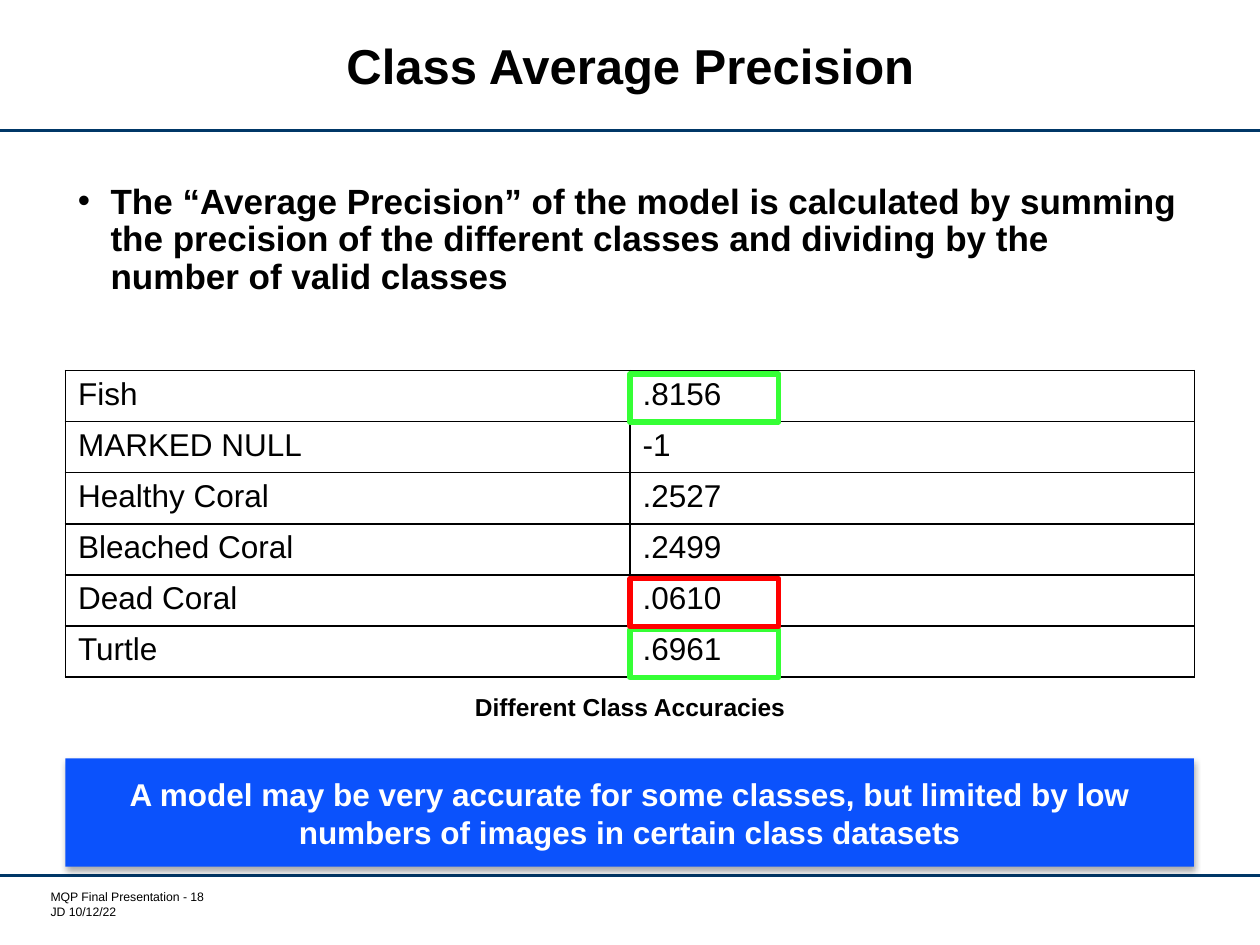
from lxml import etree
from pptx import Presentation
from pptx import util as u
from pptx.dml.color import RGBColor
from pptx.enum import shapes, text
from pptx.oxml import ns

BLACK = RGBColor(0x00, 0x00, 0x00)
WHITE = RGBColor(0xFF, 0xFF, 0xFF)
NAVY = RGBColor(0x00, 0x37, 0x67)
BLUE = RGBColor(0x0B, 0x52, 0xFC)
GREEN = RGBColor(0x35, 0xFF, 0x35)
RED = RGBColor(0xFF, 0x00, 0x00)

FONT = "Arial"
LEFT, WIDTH = 1.32, 22.75
TABLE_TOP, ROW_HEIGHT, COLUMN_WIDTH = 7.47, 1.03, 11.38
PRECISIONS = [
    ("Fish", ".8156"),
    ("MARKED NULL", "-1"),
    ("Healthy Coral", ".2527"),
    ("Bleached Coral", ".2499"),
    ("Dead Coral", ".0610"),
    ("Turtle", ".6961"),
]
HIGHLIGHTS = [("Fish", GREEN), ("Turtle", GREEN), ("Dead Coral", RED)]


def add_child(parent, tag, **attributes):
    """Append a DrawingML element and return it."""
    child = etree.SubElement(parent, ns.qn(tag))
    for name, value in attributes.items():
        child.set(name, str(value))
    return child


def box(left, top, width, height):
    """Turn four centimetre values into lengths."""
    return [u.Cm(value) for value in (left, top, width, height)]


def write(paragraph, words, size, color=BLACK, bold=False, align=text.PP_ALIGN.LEFT):
    """Add one formatted run to a paragraph."""
    paragraph.alignment = align
    run = paragraph.add_run()
    run.text = words
    run.font.name = FONT
    run.font.size = u.Pt(size)
    run.font.bold = bold
    run.font.color.rgb = color


def add_text(slide, place, lines, size, **style):
    """Add a wrapping text box with one paragraph per line."""
    frame = slide.shapes.add_textbox(*box(*place)).text_frame
    frame.word_wrap = True
    for index, words in enumerate(lines):
        paragraph = frame.add_paragraph() if index else frame.paragraphs[0]
        write(paragraph, words, size, **style)
    return frame


def add_title(slide, words):
    """Add the centred slide title."""
    frame = add_text(slide, (2.62, 0.28, 20.17, 2.26), [words], 28,
                     bold=True, align=text.PP_ALIGN.CENTER)
    frame.vertical_anchor = text.MSO_ANCHOR.MIDDLE
    frame.paragraphs[0].line_spacing = u.Pt(28)


def add_bullet(slide, words):
    """Add the bulleted statement with a hanging indent."""
    frame = add_text(slide, (LEFT, 3.58, WIDTH, 3.2), [words], 20, bold=True)
    statement = frame.paragraphs[0]
    statement.line_spacing = 0.9
    properties = statement._p.get_or_add_pPr()
    properties.set("marL", str(u.Cm(0.66)))
    properties.set("indent", str(u.Cm(-0.66)))
    add_child(properties, "a:buFont", typeface=FONT)
    add_child(properties, "a:buChar", char="•")


def add_rule(slide, top):
    """Draw a navy rule across the slide."""
    rule = slide.shapes.add_connector(
        shapes.MSO_CONNECTOR.STRAIGHT, 0, u.Cm(top), u.Cm(25.4), u.Cm(top))
    rule.line.color.rgb = NAVY
    rule.line.width = u.Pt(1.75)
    add_child(rule._element.spPr, "a:effectLst")


def add_borders(cell):
    """Give a cell thin black borders on all sides."""
    properties = cell._tc.get_or_add_tcPr()
    for side in ("a:lnL", "a:lnR", "a:lnT", "a:lnB"):
        edge = add_child(properties, side, w=u.Pt(1))
        add_child(add_child(edge, "a:solidFill"), "a:srgbClr", val=BLACK)


def add_precision_table(slide):
    """Add the table of classes and their precision."""
    place = box(LEFT, TABLE_TOP, 2 * COLUMN_WIDTH, len(PRECISIONS) * ROW_HEIGHT)
    table = slide.shapes.add_table(len(PRECISIONS), 2, *place).table
    table.first_row = False
    table.horz_banding = False
    for row, record in enumerate(PRECISIONS):
        for column, words in enumerate(record):
            cell = table.cell(row, column)
            add_borders(cell)
            cell.fill.background()
            write(cell.text_frame.paragraphs[0], words, 18)


def add_highlight(slide, class_name, color):
    """Frame the precision of one class."""
    row = [name for name, _ in PRECISIONS].index(class_name)
    place = box(LEFT + COLUMN_WIDTH, TABLE_TOP + row * ROW_HEIGHT + 0.07, 3, 0.97)
    frame = slide.shapes.add_shape(shapes.MSO_SHAPE.RECTANGLE, *place)
    frame.shadow.inherit = False
    frame.fill.background()
    frame.line.color.rgb = color
    frame.line.width = u.Pt(3)


def add_takeaway(slide, words):
    """Add the blue banner with a soft shadow below it."""
    banner = slide.shapes.add_shape(
        shapes.MSO_SHAPE.RECTANGLE, *box(LEFT, 15.29, WIDTH, 2.18))
    banner.fill.solid()
    banner.fill.fore_color.rgb = BLUE
    banner.line.fill.background()
    banner.shadow.inherit = False
    effects = banner._element.spPr.find(ns.qn("a:effectLst"))
    shadow = add_child(effects, "a:outerShdw", blurRad=u.Pt(3.5), dist=u.Pt(2.2),
                       dir=90 * 60000, rotWithShape=0)
    add_child(add_child(shadow, "a:srgbClr", val=BLACK), "a:alpha", val=32000)
    banner.text_frame.word_wrap = True
    banner.text_frame.vertical_anchor = text.MSO_ANCHOR.MIDDLE
    write(banner.text_frame.paragraphs[0], words, 18, WHITE, True,
          text.PP_ALIGN.CENTER)


def add_footer(slide, lines):
    """Add the small footer at the lower left."""
    footer = add_text(slide, (0.89, 17.93, 3.53, 0.61), lines, 7)
    footer.word_wrap = False
    footer.margin_left = u.Cm(0.13)
    footer.margin_top = footer.margin_right = footer.margin_bottom = 0


def main():
    """Build the slide and save it."""
    deck = Presentation()
    deck.slide_width, deck.slide_height = u.Cm(25.4), u.Cm(19.05)
    slide = deck.slides.add_slide(deck.slide_layouts[6])
    for top in (2.64, 17.65):
        add_rule(slide, top)
    add_footer(slide, ["MQP Final Presentation - 18", "JD 10/12/22"])
    add_precision_table(slide)
    add_bullet(slide, "The “Average Precision” of the model is calculated by "
                      "summing the precision of the different classes and "
                      "dividing by the number of valid classes")
    add_title(slide, "Class Average Precision")
    add_takeaway(slide, "A model may be very accurate for some classes, but "
                        "limited by low numbers of images in certain class "
                        "datasets")
    add_text(slide, (6.05, 13.82, 13.31, 0.86), ["Different Class Accuracies"], 14,
             bold=True, align=text.PP_ALIGN.CENTER)
    for class_name, color in HIGHLIGHTS:
        add_highlight(slide, class_name, color)
    deck.save("out.pptx")


if __name__ == "__main__":
    main()
